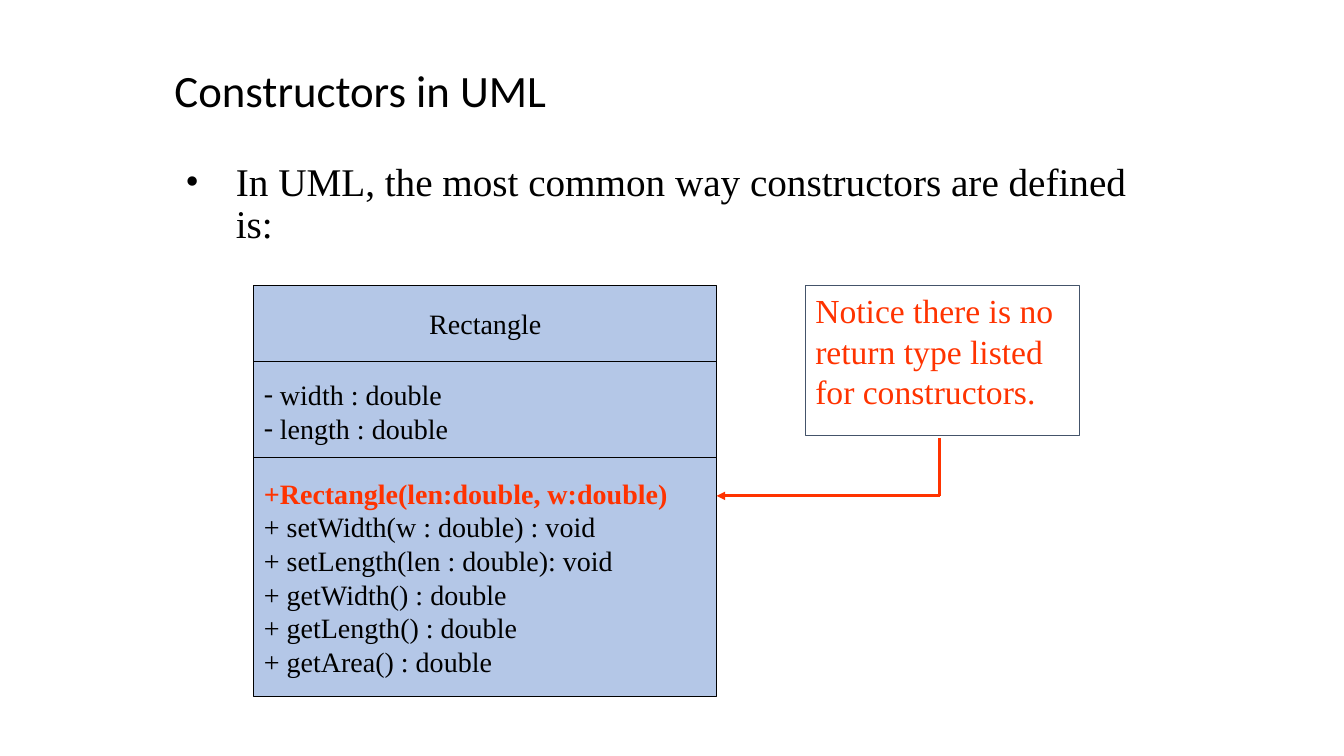
from dataclasses import dataclass

from lxml.etree import SubElement
from pptx import Presentation
from pptx.dml.color import RGBColor
from pptx.enum.shapes import MSO_CONNECTOR, MSO_SHAPE
from pptx.enum.text import MSO_ANCHOR, MSO_AUTO_SIZE, PP_ALIGN
from pptx.oxml.ns import qn
from pptx.util import Pt


@dataclass(frozen=True)
class Theme:
    ink: RGBColor = RGBColor(0, 0, 0)
    accent: RGBColor = RGBColor(0xFF, 0x33, 0x00)
    panel: RGBColor = RGBColor(0xB4, 0xC7, 0xE7)
    edge: RGBColor = RGBColor(0x44, 0x54, 0x6A)
    head: str = "Calibri"
    text: str = "Times New Roman"
    title: int = 32
    body: int = 28
    note: int = 24
    code: int = 20
    hair: float = 0.75
    arrow: float = 2


THEME = Theme()


def style(para, size, color=THEME.ink, name=THEME.text, bold=False):
    font = para.font
    font.size, font.name, font.bold = Pt(size), name, bold
    font.color.rgb = color


def bullet(para, mark, indent):
    """Give a paragraph a bullet mark with a hanging indent in points."""
    props = para._p.get_or_add_pPr()
    props.set("marL", str(Pt(indent)))
    props.set("indent", str(-Pt(indent)))
    SubElement(props, qn("a:buFont"), typeface=THEME.text)
    SubElement(props, qn("a:buChar"), char=mark)


def place(shape, left, top, width, height):
    shape.left, shape.top = Pt(left), Pt(top)
    shape.width, shape.height = Pt(width), Pt(height)


def set_title(slide, box, text):
    title = slide.shapes.title
    place(title, *box)
    frame = title.text_frame
    frame.text = text
    frame.auto_size = MSO_AUTO_SIZE.NONE
    frame.vertical_anchor = MSO_ANCHOR.MIDDLE
    para = frame.paragraphs[0]
    para.alignment = PP_ALIGN.LEFT
    para.line_spacing = 0.9
    style(para, THEME.title, name=THEME.head)


def set_body(slide, box, text):
    body = slide.placeholders[1]
    place(body, *box)
    frame = body.text_frame
    frame.text = text
    frame.auto_size = MSO_AUTO_SIZE.NONE
    para = frame.paragraphs[0]
    para.line_spacing = 0.9
    para.space_before = Pt(0)
    bullet(para, "•", 36)
    style(para, THEME.body)


def add_box(slide, box, lines, size, color=THEME.ink, fill=None,
            edge=THEME.ink, anchor=MSO_ANCHOR.MIDDLE, align=PP_ALIGN.LEFT):
    """Draw a bordered box of text lines and return its paragraphs."""
    shape = slide.shapes.add_shape(MSO_SHAPE.RECTANGLE, *map(Pt, box))
    shape.shadow.inherit = False
    if fill is None:
        shape.fill.background()
    else:
        shape.fill.solid()
        shape.fill.fore_color.rgb = fill
    shape.line.color.rgb = edge
    shape.line.width = Pt(THEME.hair)
    frame = shape.text_frame
    frame.word_wrap = True
    frame.vertical_anchor = anchor
    frame.text = "\n".join(lines)
    for para in frame.paragraphs:
        para.alignment = align
        style(para, size, color)
    return frame.paragraphs


def add_class(slide, box, name, fields, methods):
    """Draw a UML class: name, fields, then methods with a red constructor."""
    left, top, width, height = box
    name_end, field_end = top + 54.7, top + 123.1

    def panel(start, end, lines, align=PP_ALIGN.LEFT):
        return add_box(slide, (left, start, width, end - start), lines,
                       THEME.code, fill=THEME.panel, align=align)

    panel(top, name_end, [name], PP_ALIGN.CENTER)
    for para in panel(name_end, field_end + 2, fields):
        bullet(para, "-", 11.5)
        style(para, THEME.code)
    maker = panel(field_end, top + height, methods)[0]
    style(maker, THEME.code, THEME.accent, bold=True)


def add_line(slide, start, end, arrow=False):
    line = slide.shapes.add_connector(
        MSO_CONNECTOR.STRAIGHT, *map(Pt, (*start, *end)))
    line.line.color.rgb = THEME.accent
    line.line.width = Pt(THEME.arrow)
    if arrow:
        SubElement(line.line._get_or_add_ln(), qn("a:tailEnd"), type="triangle")
    SubElement(line._element.spPr, qn("a:effectLst"))


def add_note(slide, box, lines, target):
    """Draw a note with an elbow arrow from below it to the target point."""
    left, top, width, height = box
    add_box(slide, box, lines, THEME.note, THEME.accent,
            edge=THEME.edge, anchor=MSO_ANCHOR.TOP)
    stem = left + width / 2 - 2
    corner = (stem, target[1])
    add_line(slide, corner, target, arrow=True)
    add_line(slide, (stem, top + height + 2), corner)


def main():
    deck = Presentation()
    deck.slide_width, deck.slide_height = Pt(960), Pt(540)
    slide = deck.slides.add_slide(deck.slide_layouts[1])
    set_title(slide, (117.4, 27.4, 301.7, 78.5), "Constructors in UML")
    set_body(slide, (125.3, 112.3, 691.2, 409.7),
             "In UML, the most common way constructors are defined is:")
    left, top, width = 181.4, 203.8, 330.5
    add_class(slide, (left, top, width, 293.7), "Rectangle",
              ["width : double", "length : double"],
              ["+Rectangle(len:double, w:double)",
               "+ setWidth(w : double) : void",
               "+ setLength(len : double): void",
               "+ getWidth() : double",
               "+ getLength() : double",
               "+ getArea() : double"])
    add_note(slide, (575.3, top, 195.8, 107.3),
             ["Notice there is no", "return type listed", "for constructors."],
             (left + width, 354.2))
    deck.save("out.pptx")


if __name__ == "__main__":
    main()
